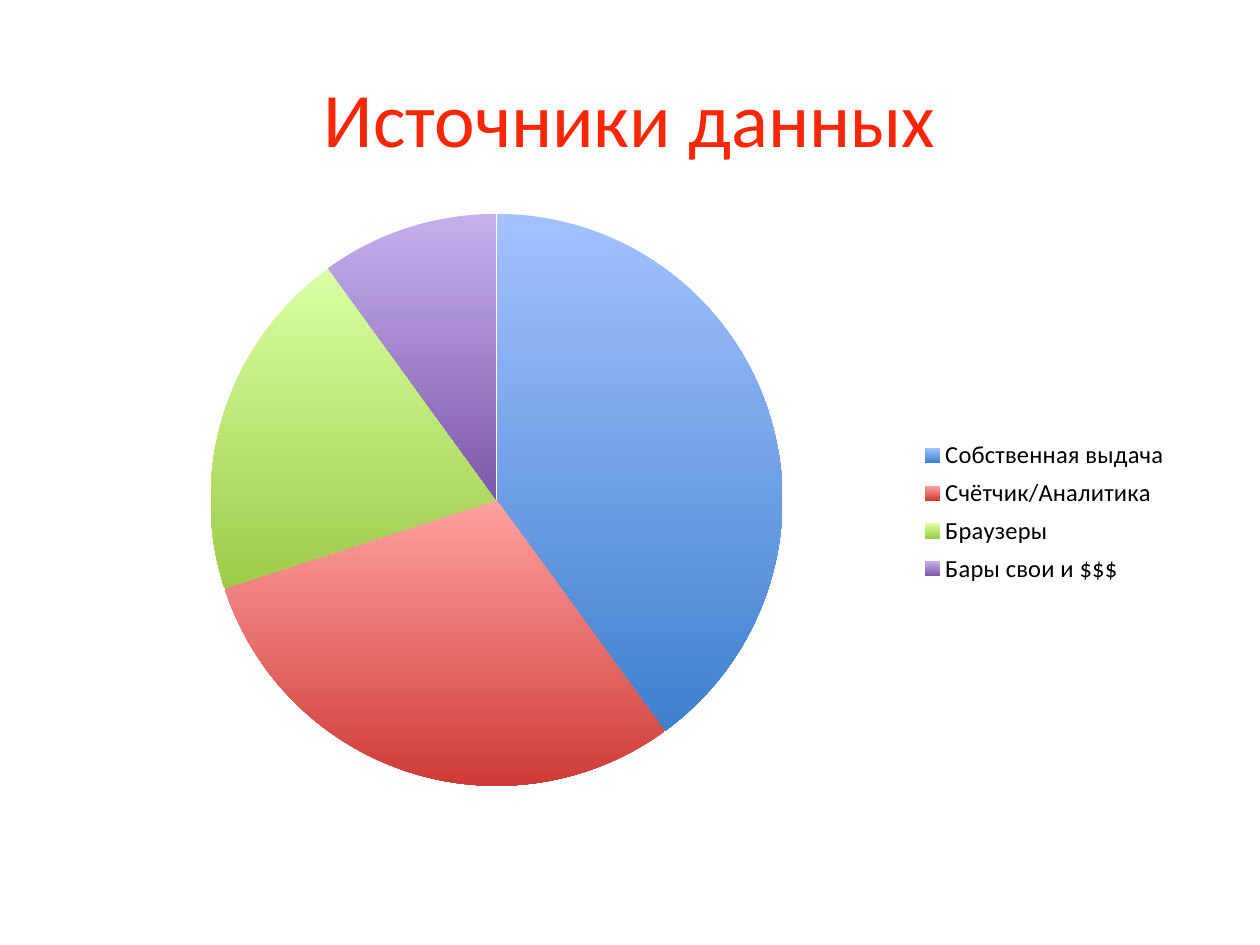
from lxml import etree
from pptx import Presentation
from pptx import util as u
from pptx.chart.data import CategoryChartData
from pptx.dml.color import RGBColor
from pptx.enum import chart as ch
from pptx.enum import text
from pptx.oxml.ns import qn

RED = RGBColor(0xFB, 0x26, 0x06)
BLACK = RGBColor(0, 0, 0)

# Category, share in percent, colour at the top and at the bottom of the slice
SOURCES = [
    ("Собственная выдача", 40, RGBColor(0xA3, 0xC1, 0xFF), RGBColor(0x3F, 0x80, 0xCD)),
    ("Счётчик/Аналитика", 30, RGBColor(0xFF, 0xA2, 0xA0), RGBColor(0xCE, 0x3B, 0x37)),
    ("Браузеры", 20, RGBColor(0xDA, 0xFF, 0xA2), RGBColor(0x9F, 0xCA, 0x4A)),
    ("Бары свои и $$$", 10, RGBColor(0xC7, 0xAF, 0xED), RGBColor(0x7D, 0x58, 0xA9)),
]


class Deck:
    """Holds the style and the current slide; boxes are shares of the slide's size."""

    font = "Calibri"

    def __init__(self, width, height):
        self.prs = Presentation()
        self.prs.slide_width, self.prs.slide_height = u.Inches(width), u.Inches(height)
        self.slide = self.prs.slides.add_slide(self.prs.slide_layouts[6])

    def box(self, left, top, width, height):
        w, h = self.prs.slide_width, self.prs.slide_height
        return [round(n) for n in (left * w, top * h, width * w, height * h)]

    def style(self, font, size, color):
        font.name, font.size = self.font, u.Pt(size)
        font.color.rgb = color

    def title(self, words, *area):
        frame = self.slide.shapes.add_textbox(*self.box(*area)).text_frame
        frame.word_wrap = True
        frame.vertical_anchor = text.MSO_ANCHOR.MIDDLE
        heading = frame.paragraphs[0]
        heading.text = words
        heading.alignment = text.PP_ALIGN.CENTER
        self.style(heading.runs[0].font, 44, RED)

    def pie(self, sources, plot, legend, *area):
        """Draw a pie; plot and legend are boxes in shares of the chart."""
        data = CategoryChartData()
        data.categories = [source[0] for source in sources]
        data.add_series("Series 1", [source[1] for source in sources])
        chart = self.slide.shapes.add_chart(
            ch.XL_CHART_TYPE.PIE, *self.box(*area), data).chart
        chart.has_title = False
        self.style(chart.font, 10, BLACK)

        chart.has_legend = True
        chart.legend.position = ch.XL_LEGEND_POSITION.RIGHT
        chart.legend.include_in_layout = False
        self.style(chart.legend.font, 14, BLACK)

        chart.plots[0].vary_by_categories = True
        points = chart.plots[0].series[0].points
        for i, (_, _, light, dark) in enumerate(sources):
            fill = points[i].format.fill
            fill.gradient()
            fill.gradient_angle = 270
            for stop, color in zip(fill.gradient_stops, (light, dark)):
                stop.color.rgb = color
            points[i].format.line.fill.background()

        plot_area = chart.plots[0]._element.getparent()
        self.place(plot_area, 0, plot, [("layoutTarget", "inner")])
        self.place(chart.legend._element, 1, legend)

    def place(self, part, index, box, settings=()):
        """Fix a chart part's box; index is where its layout belongs."""
        for old in part.findall(qn("c:layout")):
            part.remove(old)
        layout = etree.Element(qn("c:layout"))
        part.insert(index, layout)
        manual = etree.SubElement(layout, qn("c:manualLayout"))
        edges = [("xMode", "edge"), ("yMode", "edge")]
        for tag, value in [*settings, *edges, *zip("xywh", box)]:
            etree.SubElement(manual, qn("c:" + tag)).set("val", str(value))


def main():
    deck = Deck(10, 7.5)
    deck.title("Источники данных", 0.05, 0.04, 0.9, 1 / 6)
    deck.pie(SOURCES, (0.127, 0.03, 0.51, 0.94), (0.754, 0.39, 0.23, 0.26),
             0.053, 0.207, 0.893, 0.644)
    deck.prs.save("out.pptx")


if __name__ == "__main__":
    main()
